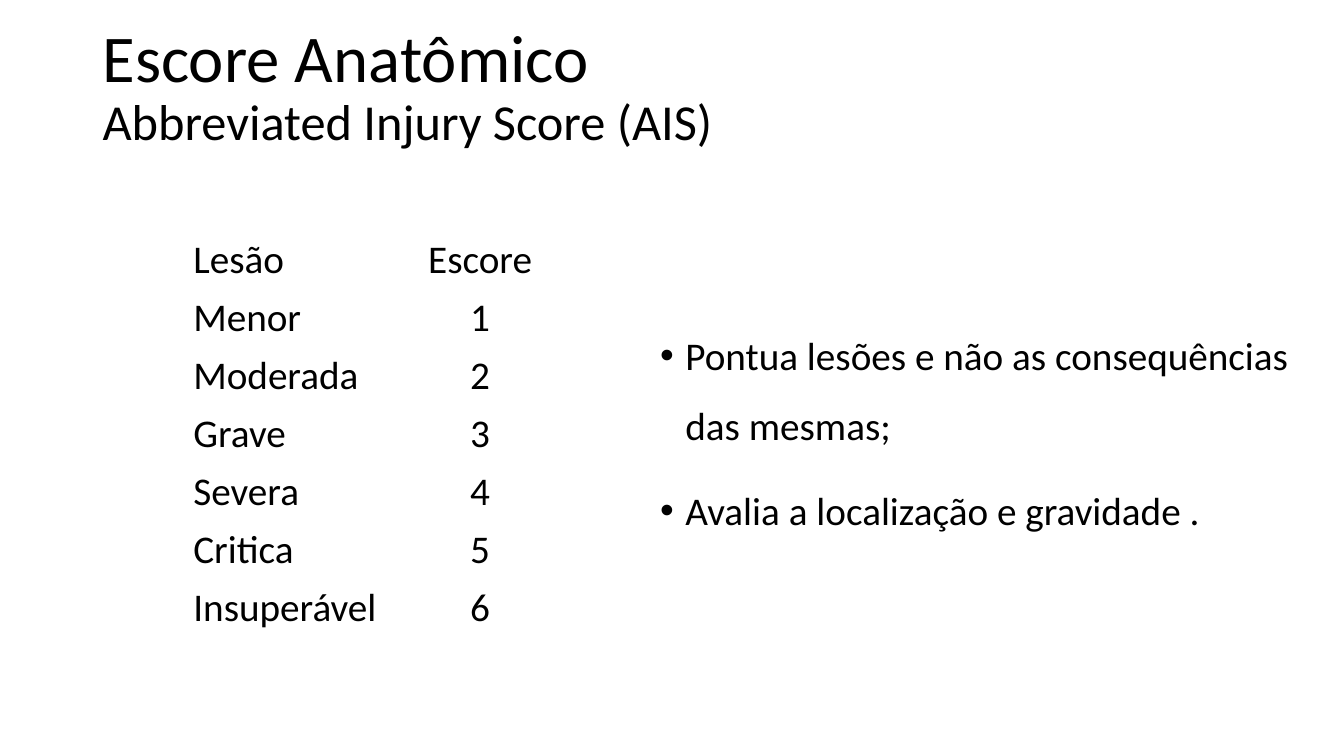
from lxml.etree import SubElement
from pptx import Presentation
from pptx.dml.color import RGBColor
from pptx.enum.text import MSO_ANCHOR, MSO_AUTO_SIZE, PP_ALIGN
from pptx.oxml.ns import qn
from pptx.util import Cm, Pt

# Content
TITLE_LINES = [("Escore Anatômico", 47.7), ("Abbreviated Injury Score (AIS)", 36)]
POINTS = [
    "Pontua lesões e não as consequências das mesmas;",
    "Avalia a localização e gravidade .",
]
SCORES = [
    ("Lesão", "Escore"),
    ("Menor", "1"),
    ("Moderada", "2"),
    ("Grave", "3"),
    ("Severa", "4"),
    ("Critica", "5"),
    ("Insuperável", "6"),
]

# Layout, in centimetres
TITLE_BOX = (2.33, 0.38, 29.21, 3.68)
POINTS_BOX = (16.38, 7.62, 16.46, 6.48)
TABLE_LEFT, TABLE_TOP = 4.62, 5.82
COLUMN_WIDTHS = (5.23, 4.5)
COLUMN_ALIGNMENTS = (PP_ALIGN.LEFT, PP_ALIGN.CENTER)
ROW_HEIGHT = 1.46
BULLET_INDENT = 0.64
TEXT_SIZE = 28


def color(hex_string):
    return RGBColor.from_string(hex_string)


def set_font(font, size):
    font.name = "Calibri"
    font.size = Pt(size)
    font.bold = False
    font.color.rgb = color("000000")


def place(shape, box):
    shape.left, shape.top, shape.width, shape.height = map(Cm, box)
    shape.text_frame.word_wrap = True
    shape.text_frame.auto_size = MSO_AUTO_SIZE.NONE


def add_bullet(paragraph):
    properties = paragraph._p.get_or_add_pPr()
    properties.set("marL", str(Cm(BULLET_INDENT)))
    properties.set("indent", str(-Cm(BULLET_INDENT)))
    SubElement(properties, qn("a:buFont"), typeface="Arial")
    SubElement(properties, qn("a:buChar"), char="•")


presentation = Presentation()
presentation.slide_width = Cm(33.87)
presentation.slide_height = Cm(19.05)
slide = presentation.slides.add_slide(presentation.slide_layouts[1])
slide.background.fill.solid()
slide.background.fill.fore_color.rgb = color("FFFFFF")

# Title with a smaller second line
title = slide.shapes.title
place(title, TITLE_BOX)
title.text_frame.vertical_anchor = MSO_ANCHOR.MIDDLE
paragraph = title.text_frame.paragraphs[0]
paragraph.alignment = PP_ALIGN.LEFT
paragraph.line_spacing = 0.9
for index, (text, size) in enumerate(TITLE_LINES):
    if index:
        paragraph.add_line_break()
    run = paragraph.add_run()
    run.text = text
    set_font(run.font, size)

# Bulleted points
points = slide.placeholders[1]
place(points, POINTS_BOX)
points.text_frame.vertical_anchor = MSO_ANCHOR.TOP
points.text_frame.text = "\n".join(POINTS)
for index, paragraph in enumerate(points.text_frame.paragraphs):
    paragraph.line_spacing = 1.5
    paragraph.space_before = Pt(10 if index else 0)
    add_bullet(paragraph)
    set_font(paragraph.font, TEXT_SIZE)

# Score table
table = slide.shapes.add_table(
    len(SCORES), len(COLUMN_WIDTHS), Cm(TABLE_LEFT), Cm(TABLE_TOP),
    Cm(sum(COLUMN_WIDTHS)), Cm(ROW_HEIGHT * len(SCORES)),
).table
table.horz_banding = False
for column, width in zip(table.columns, COLUMN_WIDTHS):
    column.width = Cm(width)
for row, texts in zip(table.rows, SCORES):
    row.height = Cm(ROW_HEIGHT)
    for cell, text, alignment in zip(row.cells, texts, COLUMN_ALIGNMENTS):
        cell.fill.background()
        cell.text = text
        paragraph = cell.text_frame.paragraphs[0]
        paragraph.alignment = alignment
        set_font(paragraph.font, TEXT_SIZE)

presentation.save("out.pptx")
